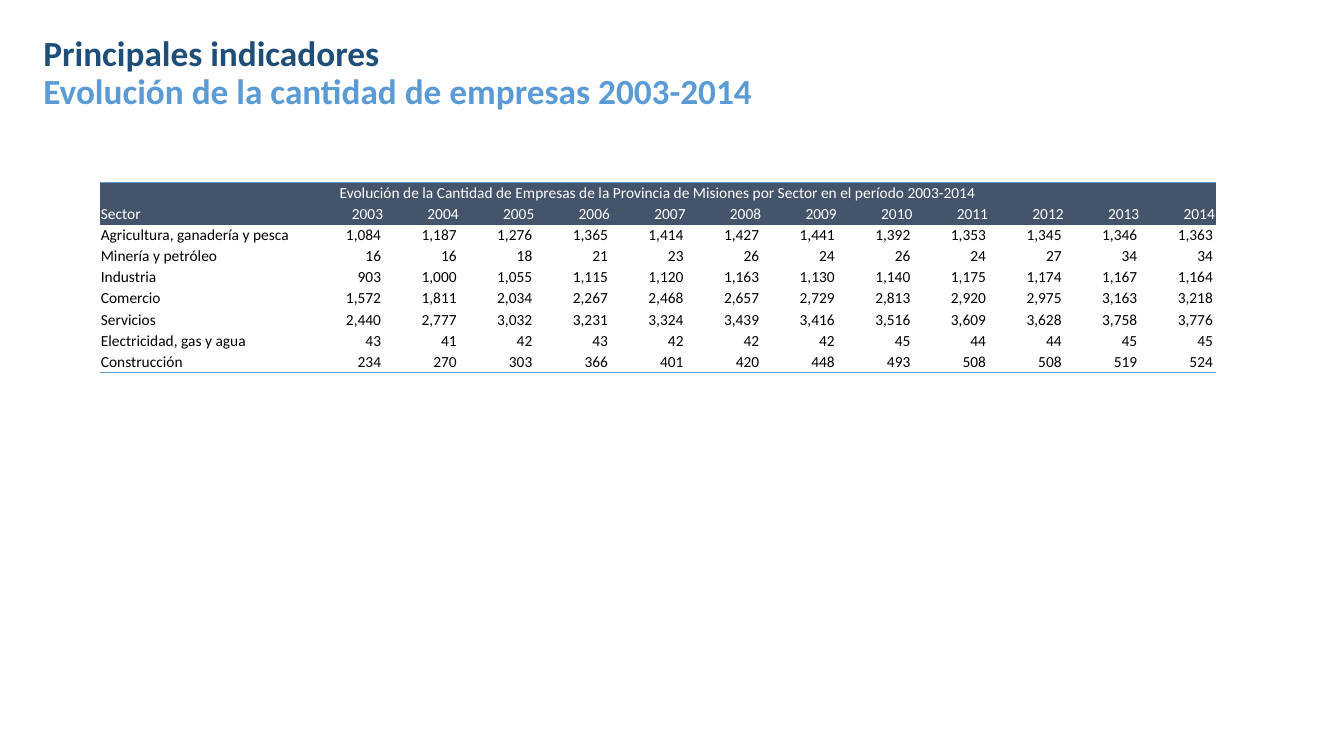
from lxml import etree
from pptx import Presentation
from pptx.dml.color import RGBColor
from pptx.enum.text import MSO_ANCHOR, MSO_AUTO_SIZE, PP_ALIGN
from pptx.oxml.ns import qn
from pptx.util import Inches, Pt

LEFT, CENTER, RIGHT = PP_ALIGN.LEFT, PP_ALIGN.CENTER, PP_ALIGN.RIGHT
TOP, MIDDLE, BOTTOM = MSO_ANCHOR.TOP, MSO_ANCHOR.MIDDLE, MSO_ANCHOR.BOTTOM
NO_AUTOFIT = MSO_AUTO_SIZE.NONE

FONT = "Calibri"
COLORS = {"title": "1F4E79", "accent": "5B9BD5", "header": "44546A",
          "white": "FFFFFF", "text": "000000"}
PLAIN_STYLE = "{2D5ABB26-0587-4C30-8999-92F81FD0307C}"

# Table grid, in inches
SECTOR_W, YEAR_W, ROW_H = 2.07, 0.75, 0.21

CAPTION = ("Evolución de la Cantidad de Empresas de la Provincia de Misiones "
           "por Sector en el período 2003-2014")
YEARS = range(2003, 2015)
COMPANIES = {
    "Agricultura, ganadería y pesca":
        [1084, 1187, 1276, 1365, 1414, 1427, 1441, 1392, 1353, 1345, 1346, 1363],
    "Minería y petróleo": [16, 16, 18, 21, 23, 26, 24, 26, 24, 27, 34, 34],
    "Industria":
        [903, 1000, 1055, 1115, 1120, 1163, 1130, 1140, 1175, 1174, 1167, 1164],
    "Comercio":
        [1572, 1811, 2034, 2267, 2468, 2657, 2729, 2813, 2920, 2975, 3163, 3218],
    "Servicios":
        [2440, 2777, 3032, 3231, 3324, 3439, 3416, 3516, 3609, 3628, 3758, 3776],
    "Electricidad, gas y agua": [43, 41, 42, 43, 42, 42, 42, 45, 44, 44, 45, 45],
    "Construcción":
        [234, 270, 303, 366, 401, 420, 448, 493, 508, 508, 519, 524],
}


def rgb(name):
    return RGBColor.from_string(COLORS[name])


def format_run(r, size, color, bold=False):
    r.font.name = FONT
    r.font.size = Pt(size)
    r.font.bold = bold
    r.font.color.rgb = rgb(color)


def add_title(slide, box, lines):
    """Fill the title placeholder with one coloured run per line."""
    s = slide.shapes.title
    s.left, s.top, s.width, s.height = (Inches(v) for v in box)
    tf = s.text_frame
    tf.auto_size = NO_AUTOFIT
    tf.word_wrap = True
    tf.vertical_anchor = BOTTOM
    p = tf.paragraphs[0]
    p.alignment = LEFT
    p.line_spacing = 0.9
    for i, (text, color) in enumerate(lines):
        if i:
            p.add_line_break()
        r = p.add_run()
        r.text = text
        format_run(r, 25.2, color, bold=True)


def add_border(cell, side):
    """Draw a 1 pt accent line on one side of a cell."""
    ln = etree.Element(qn("a:" + side), w=str(Pt(1)))
    fill = etree.SubElement(ln, qn("a:solidFill"))
    etree.SubElement(fill, qn("a:srgbClr"), val=COLORS["accent"])
    cell._tc.get_or_add_tcPr().insert(0, ln)


def fill_cell(cell, text, align, header=False, anchor=TOP, right=0.01):
    cell.margin_left = cell.margin_top = Inches(0.01)
    cell.margin_right, cell.margin_bottom = Inches(right), 0
    cell.vertical_anchor = anchor
    if header:
        cell.fill.solid()
        cell.fill.fore_color.rgb = rgb("header")
    else:
        cell.fill.background()
    p = cell.text_frame.paragraphs[0]
    p.text = text
    p.alignment = align
    for r in p.runs:
        format_run(r, 11, "white" if header else "text")


def add_company_table(slide, left, top):
    n_rows, n_cols = len(COMPANIES) + 2, len(YEARS) + 1
    frame = slide.shapes.add_table(
        n_rows, n_cols, Inches(left), Inches(top),
        Inches(SECTOR_W + YEAR_W * len(YEARS)), Inches(ROW_H * n_rows))
    table = frame.table
    table.first_row = table.horz_banding = False
    table._tbl.tblPr.find(qn("a:tableStyleId")).text = PLAIN_STYLE
    for i, column in enumerate(table.columns):
        column.width = Inches(YEAR_W if i else SECTOR_W)
    for row in table.rows:
        row.height = Inches(ROW_H)

    # Caption across all columns
    for i in range(n_cols):
        fill_cell(table.cell(0, i), "" if i else CAPTION, CENTER, header=True)
        add_border(table.cell(0, i), "lnT")
    table.cell(0, 0).merge(table.cell(0, n_cols - 1))

    # Column headings
    for i, text in enumerate(["Sector", *map(str, YEARS)]):
        fill_cell(table.cell(1, i), text, RIGHT if i else LEFT,
                  header=True, anchor=MIDDLE)

    # One row per sector
    for row, (sector, values) in enumerate(COMPANIES.items(), start=2):
        fill_cell(table.cell(row, 0), sector, LEFT)
        for col, value in enumerate(values, start=1):
            fill_cell(table.cell(row, col), f"{value:,}", RIGHT, right=0.03)
    for i in range(n_cols):
        add_border(table.cell(n_rows - 1, i), "lnB")


def main():
    prs = Presentation()
    prs.slide_width, prs.slide_height = Inches(13.33), Inches(7.5)
    slide = prs.slides.add_slide(prs.slide_layouts[5])
    add_title(slide, (0.33, 0.29, 12.38, 0.87), [
        ("Principales indicadores", "title"),
        ("Evolución de la cantidad de empresas 2003-2014", "accent")])
    add_company_table(slide, 0.99, 1.81)
    prs.save("out.pptx")


if __name__ == "__main__":
    main()
